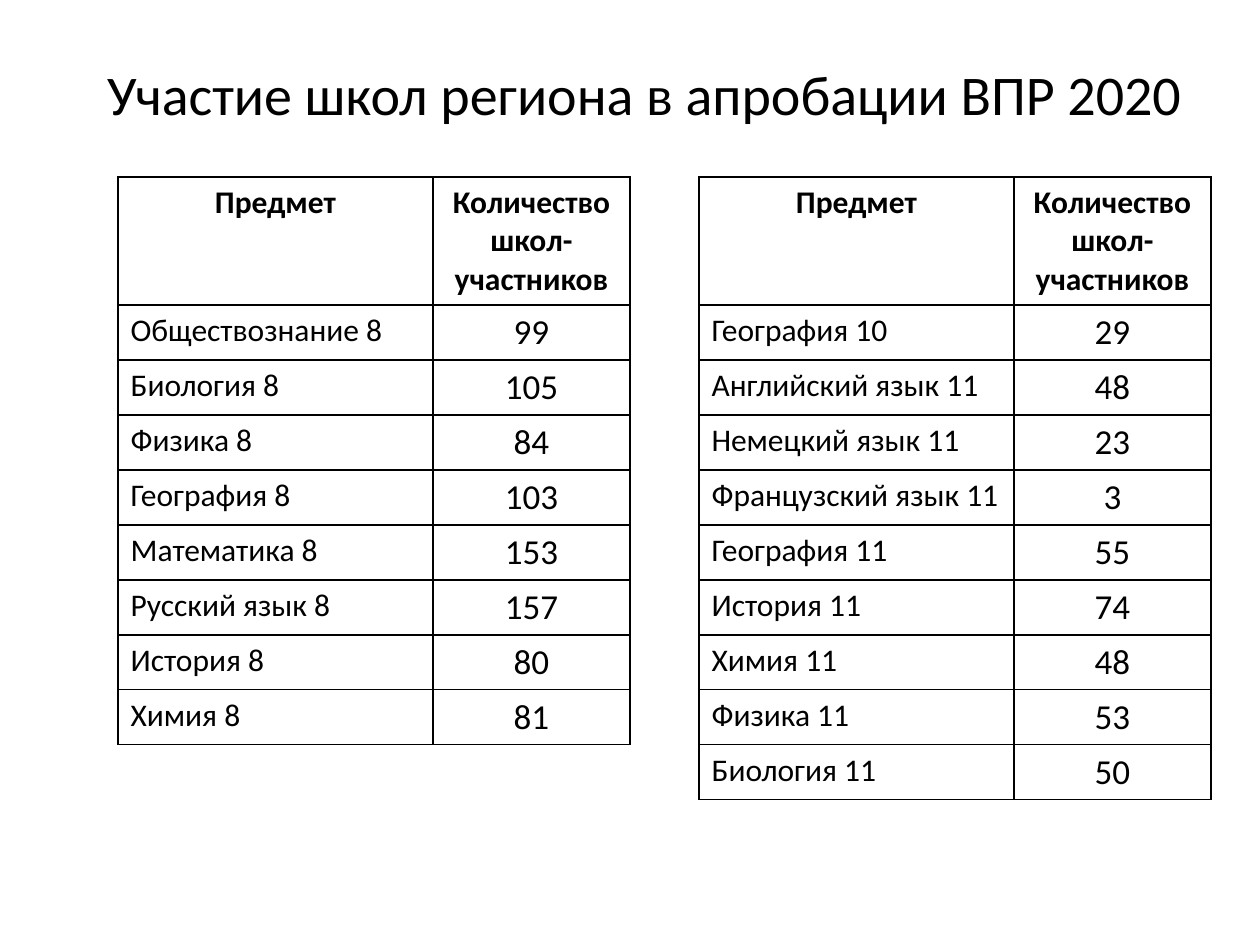
from lxml import etree
from pptx import Presentation
from pptx.dml.color import RGBColor
from pptx.enum.text import MSO_ANCHOR, PP_ALIGN
from pptx.oxml.ns import qn
from pptx.util import Emu, Pt

LEFT, CENTER = PP_ALIGN.LEFT, PP_ALIGN.CENTER
MIDDLE = MSO_ANCHOR.MIDDLE
EMU_PER_PX = 914400 / 126
FONT = "Calibri"
BLACK = "000000"
COLUMN_WIDTHS = (315, 197)
HEADER_HEIGHT, ROW_HEIGHT = 128, 55
TABLE_TOP = 177
HEADERS = ("Предмет", "Количество школ-участников")
GRADE_8 = [
    ("Обществознание 8", 99),
    ("Биология 8", 105),
    ("Физика 8", 84),
    ("География 8", 103),
    ("Математика 8", 153),
    ("Русский язык 8", 157),
    ("История 8", 80),
    ("Химия 8", 81),
]
GRADES_10_11 = [
    ("География 10", 29),
    ("Английский язык 11", 48),
    ("Немецкий язык 11", 23),
    ("Французский язык 11", 3),
    ("География 11", 55),
    ("История 11", 74),
    ("Химия 11", 48),
    ("Физика 11", 53),
    ("Биология 11", 50),
]


def px(length):
    """Convert pixels to EMU."""
    return Emu(round(length * EMU_PER_PX))


def color(value):
    """Return the colour for a hex string."""
    return RGBColor.from_string(value)


def write(text_frame, text, size, align=LEFT, bold=False):
    """Write one formatted run into the first paragraph."""
    text_frame.word_wrap = True
    paragraph = text_frame.paragraphs[0]
    paragraph.alignment = align
    run = paragraph.add_run()
    run.text = text
    run.font.name = FONT
    run.font.size = Pt(size)
    run.font.bold = bold
    run.font.color.rgb = color(BLACK)


def add_title(slide, text):
    """Add the centred slide title."""
    shape = slide.shapes.add_textbox(px(78), px(49), px(1134), px(88))
    shape.text_frame.vertical_anchor = MIDDLE
    write(shape.text_frame, text, 32, CENTER)


def add_borders(cell):
    """Draw a thin black line on every side of a cell."""
    properties = cell._tc.get_or_add_tcPr()
    for index, side in enumerate(("lnL", "lnR", "lnT", "lnB")):
        line = etree.Element(qn(f"a:{side}"), w=str(Pt(1)))
        fill = etree.SubElement(line, qn("a:solidFill"))
        etree.SubElement(fill, qn("a:srgbClr"), val=BLACK)
        properties.insert(index, line)


def fill_row(table, row, values, sizes, aligns, bold=False):
    """Fill one table row with bordered, unfilled cells."""
    for column, value in enumerate(values):
        cell = table.cell(row, column)
        cell.fill.background()
        add_borders(cell)
        write(cell.text_frame, str(value), sizes[column], aligns[column], bold)


def add_subject_table(slide, left, subjects):
    """Add a table of subjects and participating school counts."""
    height = HEADER_HEIGHT + ROW_HEIGHT * len(subjects)
    table = slide.shapes.add_table(
        len(subjects) + 1, len(HEADERS),
        px(left), px(TABLE_TOP), px(sum(COLUMN_WIDTHS)), px(height),
    ).table
    table.first_row = table.horz_banding = False
    for column, width in zip(table.columns, COLUMN_WIDTHS):
        column.width = px(width)
    for row in table.rows:
        row.height = px(ROW_HEIGHT)
    table.rows[0].height = px(HEADER_HEIGHT)
    fill_row(table, 0, HEADERS, (18, 18), (CENTER, CENTER), bold=True)
    for row, subject in enumerate(subjects, start=1):
        fill_row(table, row, subject, (18, 20), (LEFT, CENTER))


def main():
    """Build and save the slide."""
    presentation = Presentation()
    presentation.slide_width, presentation.slide_height = px(1260), px(945)
    slide = presentation.slides.add_slide(presentation.slide_layouts[6])
    add_title(slide, "Участие школ региона в апробации ВПР 2020")
    add_subject_table(slide, 118, GRADE_8)
    add_subject_table(slide, 699, GRADES_10_11)
    presentation.save("out.pptx")


if __name__ == "__main__":
    main()
